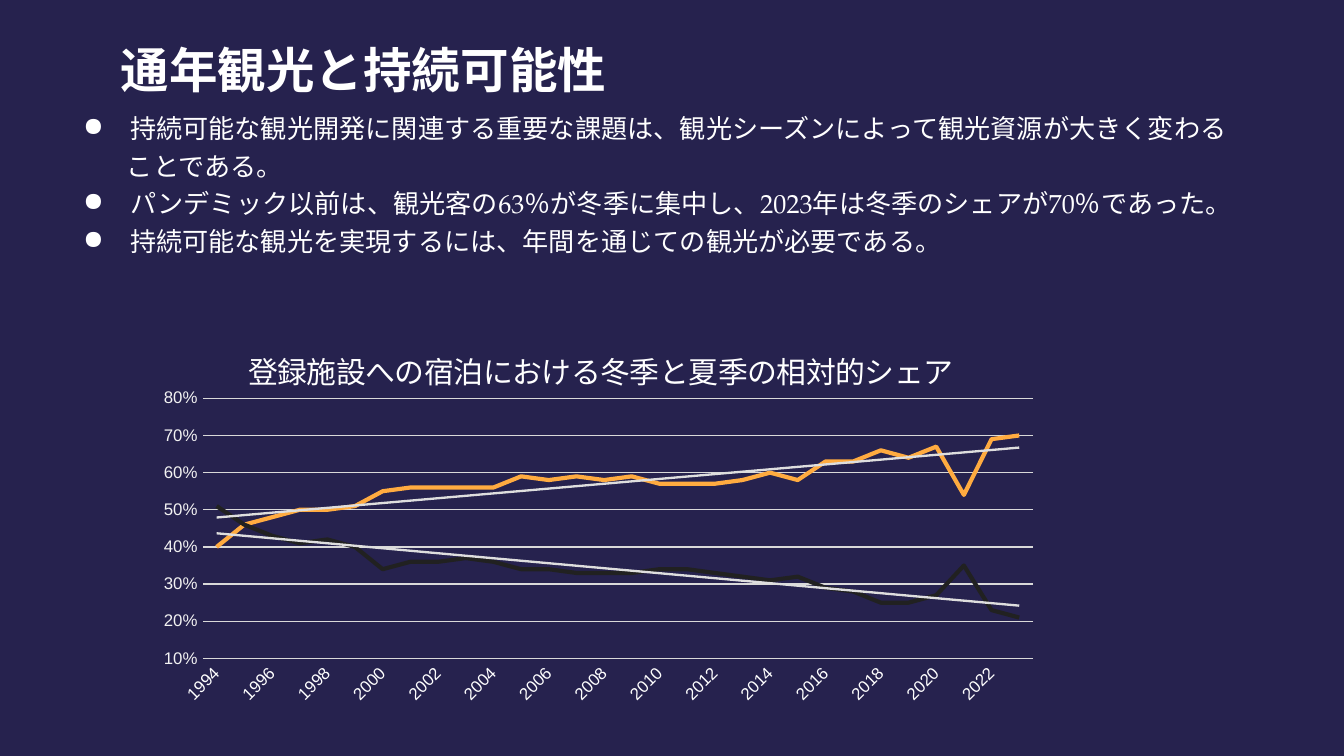
from dataclasses import dataclass

from lxml import etree
from pptx import Presentation
from pptx.chart.data import CategoryChartData
from pptx.dml.color import RGBColor
from pptx.enum.chart import XL_CHART_TYPE, XL_MARKER_STYLE, XL_TICK_MARK
from pptx.enum.text import MSO_ANCHOR, MSO_AUTO_SIZE, PP_ALIGN
from pptx.oxml import parse_xml
from pptx.oxml.ns import nsdecls, qn
from pptx.util import Cm, Pt

LINE = XL_CHART_TYPE.LINE
NO_MARKER = XL_MARKER_STYLE.NONE
NO_TICK = XL_TICK_MARK.NONE
TOP = MSO_ANCHOR.TOP
NO_FIT = MSO_AUTO_SIZE.NONE
LEFT = PP_ALIGN.LEFT


@dataclass(frozen=True)
class Theme:
    """Colours, fonts and type sizes of the deck."""
    background: str = "26224E"
    text: str = "FFFFFF"
    value_labels: str = "F2F2F2"
    grid: str = "D9D9D9"
    trend: str = "DEDEDE"
    winter: str = "FFAB40"
    summer: str = "212121"
    heading_font: str = "Arial"
    body_font: str = "TeX Gyre Pagella"
    title_size: float = 26
    chart_title_size: float = 16
    body_size: float = 14
    chart_size: float = 10
    axis_size: float = 9


THEME = Theme()
TITLE = "通年観光と持続可能性"
POINTS = [
    ("持続可能な観光開発に関連する重要な課題は、観光シーズンによって観光資源が大きく変わる", True),
    ("ことである。", False),
    ("パンデミック以前は、観光客の63％が冬季に集中し、2023年は冬季のシェアが70％であった。", True),
    ("持続可能な観光を実現するには、年間を通じての観光が必要である。", True),
]
CHART_TITLE = "登録施設への宿泊における冬季と夏季の相対的シェア"
YEARS = [str(year) for year in range(1994, 2024)]
WINTER = [40, 46, 48, 50, 50, 51, 55, 56, 56, 56, 56, 59, 58, 59, 58,
          59, 57, 57, 57, 58, 60, 58, 63, 63, 66, 64, 67, 54, 69, 70]
SUMMER = [51, 46, 43, 41, 42, 40, 34, 36, 36, 37, 36, 34, 34, 33, 33,
          33, 34, 34, 33, 32, 31, 32, 29, 28, 25, 25, 27, 35, 23, 21]
SHARES = [("冬季", WINTER, THEME.winter), ("夏季", SUMMER, THEME.summer)]


def style_font(font, name, size, color, bold=False):
    """Set the face, size, colour and weight of a font."""
    font.name = name
    font.size = Pt(size)
    font.bold = bold
    font.color.rgb = RGBColor.from_string(color)


def style_line(line, color, width):
    """Set the colour and width of a line."""
    line.color.rgb = RGBColor.from_string(color)
    line.width = Pt(width)


def set_insets(frame, side, edge):
    """Set the side and top/bottom insets of a text frame."""
    frame.margin_left = frame.margin_right = Cm(side)
    frame.margin_top = frame.margin_bottom = Cm(edge)


def add_title(page):
    """Place and format the slide title."""
    title = page.shapes.title
    title.left, title.top, title.width, title.height = Cm(2.03), Cm(0.51), Cm(19.81), Cm(1.85)
    frame = title.text_frame
    frame.text = TITLE
    frame.auto_size = NO_FIT
    frame.vertical_anchor = TOP
    set_insets(frame, 0.25, 0.25)
    para = frame.paragraphs[0]
    para.alignment = LEFT
    style_font(para.runs[0].font, THEME.heading_font, THEME.title_size, THEME.text, True)


def set_bullet(para, bulleted):
    """Indent a paragraph and give it a round bullet if wanted."""
    properties = para._p.get_or_add_pPr()
    properties.set("marL", str(Cm(1.27 if bulleted else 1.21)))
    properties.set("indent", str(Cm(-0.89 if bulleted else 0)))
    if bulleted:
        color = etree.SubElement(properties, qn("a:buClr"))
        etree.SubElement(color, qn("a:srgbClr"), val=THEME.text)
        etree.SubElement(properties, qn("a:buChar"), char="●")
    else:
        etree.SubElement(properties, qn("a:buNone"))


def add_points(page):
    """Add the list of key points."""
    box = page.shapes.add_textbox(Cm(0.94), Cm(1.88), Cm(23.52), Cm(3.12))
    frame = box.text_frame
    frame.word_wrap = True
    set_insets(frame, 0.25, 0.13)
    frame.text = "\n".join(text for text, _ in POINTS)
    for para, (_, bulleted) in zip(frame.paragraphs, POINTS):
        set_bullet(para, bulleted)
        para.line_spacing = 1.2
        style_font(para.runs[0].font, THEME.body_font, THEME.body_size, THEME.text)


def set_layout(parent, index, **values):
    """Give a chart part a manual layout in fractions of the chart."""
    for old in parent.findall(qn("c:layout")):
        parent.remove(old)
    layout = etree.Element(qn("c:layout"))
    manual = etree.SubElement(layout, qn("c:manualLayout"))
    for name, value in values.items():
        etree.SubElement(manual, qn(f"c:{name}"), val=str(value))
    parent.insert(index, layout)


def add_trend(series):
    """Add a linear trend line to a series."""
    trend = parse_xml(
        f'<c:trendline {nsdecls("c", "a")}><c:spPr><a:ln w="{Pt(1.25)}"><a:solidFill>'
        f'<a:srgbClr val="{THEME.trend}"/></a:solidFill></a:ln></c:spPr>'
        '<c:trendlineType val="linear"/><c:dispRSqr val="0"/><c:dispEq val="0"/></c:trendline>')
    series._element.find(qn("c:cat")).addprevious(trend)


def style_axes(chart):
    """Format the year axis and the percentage axis."""
    years, shares = chart.category_axis, chart.value_axis
    for axis, color in ((years, THEME.text), (shares, THEME.value_labels)):
        axis.major_tick_mark = axis.minor_tick_mark = NO_TICK
        style_font(axis.tick_labels.font, THEME.heading_font, THEME.axis_size, color)
    years._element.find(qn("c:txPr")).find(qn("a:bodyPr")).set("rot", "-2700000")
    style_line(years.format.line, THEME.grid, 0.75)
    shares.minimum_scale, shares.maximum_scale, shares.major_unit = 0.1, 0.8, 0.1
    shares.tick_labels.number_format = "0%"
    shares.tick_labels.number_format_is_linked = False
    shares.format.line.fill.background()
    style_line(shares.major_gridlines.format.line, THEME.grid, 0.75)


def add_share_chart(page):
    """Add the line chart of winter and summer shares."""
    data = CategoryChartData(number_format="0%")
    data.categories = YEARS
    for name, percents, _ in SHARES:
        data.add_series(name, [percent / 100 for percent in percents])
    chart = page.shapes.add_chart(LINE, Cm(2.46), Cm(5.97), Cm(19.35), Cm(7.92), data).chart
    style_font(chart.font, THEME.heading_font, THEME.chart_size, THEME.text)
    chart.has_legend = False
    title = chart.chart_title
    title.text_frame.text = CHART_TITLE
    style_font(title.text_frame.paragraphs[0].runs[0].font,
               THEME.heading_font, THEME.chart_title_size, THEME.text)
    set_layout(title._element, 1, xMode="edge", yMode="edge", x=0.11, y=0.06)
    plot = chart.plots[0]
    plot.vary_by_categories = False
    set_layout(plot._element.getparent(), 0, layoutTarget="inner", xMode="edge",
               yMode="edge", x=0.071, y=0.197, w=0.811, h=0.621)
    for series, (_, _, color) in zip(plot.series, SHARES):
        series.smooth = False
        series.marker.style = NO_MARKER
        style_line(series.format.line, color, 2.25)
        add_trend(series)
    style_axes(chart)


def main():
    """Build and save the deck."""
    deck = Presentation()
    deck.slide_width, deck.slide_height = Cm(25.4), Cm(14.29)
    page = deck.slides.add_slide(deck.slide_layouts.get_by_name("Title Only"))
    page.background.fill.solid()
    page.background.fill.fore_color.rgb = RGBColor.from_string(THEME.background)
    add_title(page)
    add_points(page)
    add_share_chart(page)
    deck.save("out.pptx")


if __name__ == "__main__":
    main()
